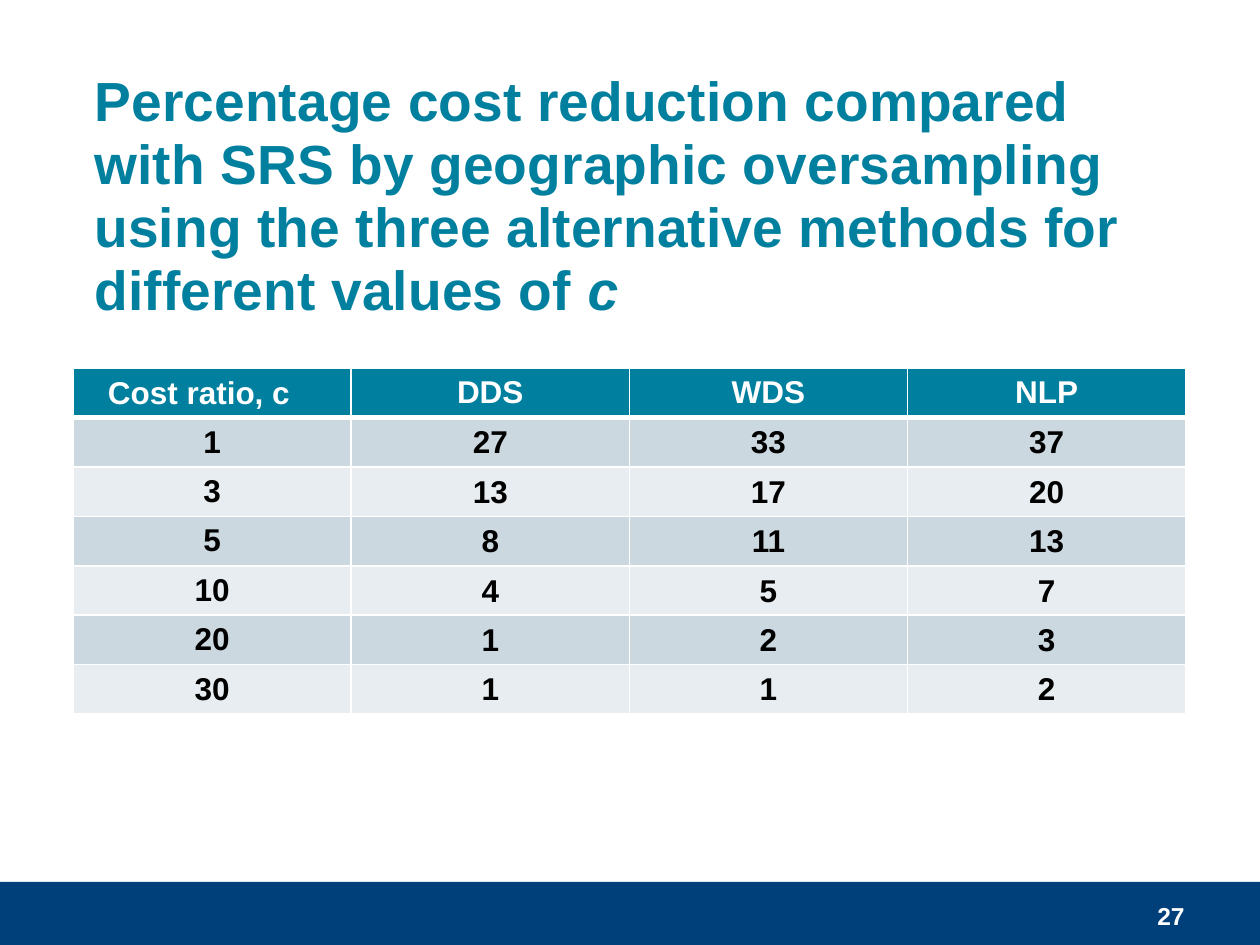
from dataclasses import dataclass

from lxml import etree
from pptx import Presentation
from pptx.dml.color import RGBColor
from pptx.enum.shapes import MSO_SHAPE
from pptx.enum.text import MSO_ANCHOR, MSO_AUTO_SIZE, PP_ALIGN
from pptx.oxml.ns import qn
from pptx.util import Inches, Pt

RECTANGLE = MSO_SHAPE.RECTANGLE
MIDDLE = MSO_ANCHOR.MIDDLE
NO_AUTOFIT = MSO_AUTO_SIZE.NONE
LEFT, CENTER, RIGHT = PP_ALIGN.LEFT, PP_ALIGN.CENTER, PP_ALIGN.RIGHT

NAVY = RGBColor(0x00, 0x40, 0x7A)
TEAL = RGBColor(0x00, 0x80, 0x9E)
DARK_BAND = RGBColor(0xCC, 0xD8, 0xDF)
LIGHT_BAND = RGBColor(0xE7, 0xED, 0xF0)
WHITE = RGBColor(0xFF, 0xFF, 0xFF)
BLACK = RGBColor(0x00, 0x00, 0x00)
FONT = "Arial"

TITLE = ("Percentage cost reduction compared with SRS by geographic oversampling "
         "using the three alternative methods for different values of ")
HEADINGS = ("Cost ratio, c", "DDS", "WDS", "NLP")
REDUCTIONS = (
    (1, 27, 33, 37),
    (3, 13, 17, 20),
    (5, 8, 11, 13),
    (10, 4, 5, 7),
    (20, 1, 2, 3),
    (30, 1, 1, 2),
)


@dataclass(frozen=True)
class CellStyle:
    fill: RGBColor
    color: RGBColor
    margins: tuple[float, float, float, float]  # left, top, right, bottom
    top_line: float = 1
    bottom_line: float = 1


def add_span(para, text: str, size: float, color: RGBColor, italic: bool = False):
    span = para.add_run()
    span.text = text
    font = span.font
    font.name, font.size, font.bold, font.italic = FONT, Pt(size), True, italic
    font.color.rgb = color
    return span


def add_border(cell, side: str, width: float) -> None:
    line = etree.SubElement(cell._tc.get_or_add_tcPr(), qn(f"a:ln{side}"), w=str(Pt(width)))
    fill = etree.SubElement(line, qn("a:solidFill"))
    etree.SubElement(fill, qn("a:srgbClr"), val=str(WHITE))


def draw_cell(cell, text: str, style: CellStyle) -> None:
    for side, width in (("L", 1), ("R", 1), ("T", style.top_line), ("B", style.bottom_line)):
        add_border(cell, side, width)
    cell.fill.solid()
    cell.fill.fore_color.rgb = style.fill
    cell.vertical_anchor = MIDDLE
    (cell.margin_left, cell.margin_top,
     cell.margin_right, cell.margin_bottom) = map(Inches, style.margins)
    para = cell.text_frame.paragraphs[0]
    para.alignment = CENTER
    add_span(para, text, 18, style.color)


def cell_style(row: int, column: int) -> CellStyle:
    wide, tight = (0.07, 0, 0.07, 0), (0.01, 0.01, 0.01, 0)
    if row == 0:
        # The first heading sits a little left of centre
        margins = (0.01, 0.01, 0.22, 0) if column == 0 else wide
        return CellStyle(TEAL, WHITE, margins, bottom_line=3)
    return CellStyle(DARK_BAND if row % 2 else LIGHT_BAND, BLACK,
                     wide if column == 0 else tight, top_line=3 if row == 1 else 1)


def draw_footer_bar(page) -> None:
    bar = page.shapes.add_shape(RECTANGLE, Inches(0), Inches(7), Inches(10), Inches(0.5))
    bar.shadow.inherit = False
    bar.fill.solid()
    bar.fill.fore_color.rgb = NAVY
    bar.line.color.rgb = NAVY
    bar.line.width = Pt(0.5)


def draw_title(page) -> None:
    title = page.shapes.title
    title.left, title.top = Inches(0.4), Inches(0.74)
    title.width, title.height = Inches(9.1), Inches(1.63)
    frame = title.text_frame
    frame.word_wrap, frame.auto_size, frame.vertical_anchor = True, NO_AUTOFIT, MIDDLE
    para = frame.paragraphs[0]
    para.alignment, para.line_spacing = LEFT, Pt(36)
    properties = para._p.get_or_add_pPr()
    properties.set("marL", str(Inches(0.25)))
    properties.set("indent", "0")
    for text, italic in ((TITLE, False), ("c", True)):
        span = add_span(para, text, 31.5, TEAL, italic)
        span._r.get_or_add_rPr().set("spc", "10")


def draw_table(page) -> None:
    rows = (HEADINGS, *REDUCTIONS)
    table = page.shapes.add_table(len(rows), len(HEADINGS), Inches(0.58), Inches(2.92),
                                  Inches(8.83), Inches(2.75)).table
    for r, values in enumerate(rows):
        for c, value in enumerate(values):
            draw_cell(table.cell(r, c), str(value), cell_style(r, c))


def draw_page_number(page) -> None:
    box = page.shapes.add_textbox(Inches(7.17), Inches(7.07), Inches(2.33), Inches(0.4))
    frame = box.text_frame
    frame.word_wrap, frame.vertical_anchor = True, MIDDLE
    para = frame.paragraphs[0]
    para.alignment = RIGHT
    add_span(para, "27", 14, WHITE)


def main() -> None:
    deck = Presentation()
    deck.slide_width, deck.slide_height = Inches(10), Inches(7.5)
    page = deck.slides.add_slide(deck.slide_layouts.get_by_name("Title Only"))
    draw_footer_bar(page)
    draw_title(page)
    draw_table(page)
    draw_page_number(page)
    deck.save("out.pptx")


if __name__ == "__main__":
    main()
